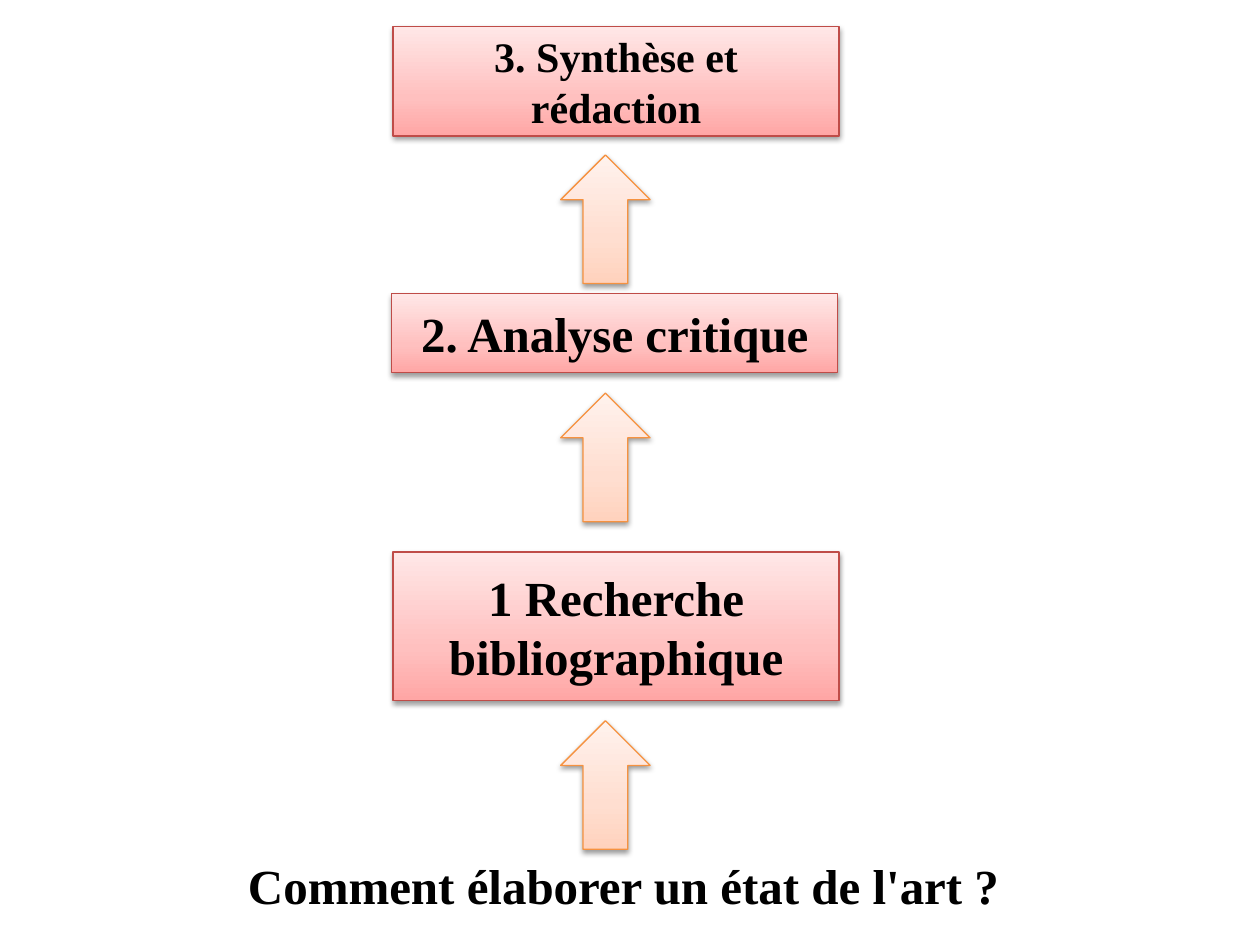
from lxml.etree import SubElement
from pptx import Presentation
from pptx.dml.color import RGBColor
from pptx.enum.shapes import MSO_SHAPE
from pptx.enum.text import MSO_ANCHOR, MSO_AUTO_SIZE, PP_ALIGN
from pptx.oxml import parse_xml
from pptx.oxml.ns import nsdecls
from pptx.util import Inches, Pt


def add_shaded_shape(kind, left, top, width, height, stops, outline):
    """Add a shape with a bottom-to-top gradient, thin outline and soft shadow."""
    shape = slide.shapes.add_shape(
        kind, Inches(left), Inches(top), Inches(width), Inches(height))
    stop_xml = "".join(
        f'<a:gs pos="{position * 1000}"><a:srgbClr val="{color}"/></a:gs>'
        for position, color in zip((0, 35, 100), stops))
    properties = shape._element.spPr
    properties.append(parse_xml(
        f'<a:gradFill {nsdecls("a")} rotWithShape="1"><a:gsLst>{stop_xml}</a:gsLst>'
        '<a:lin ang="16200000" scaled="1"/></a:gradFill>'))
    shape.line.color.rgb = RGBColor.from_string(outline)
    shape.line.width = Pt(0.75)
    shape.shadow.inherit = False
    properties[-1].append(parse_xml(
        f'<a:outerShdw {nsdecls("a")} blurRad="{Pt(3.1)}" dist="{Pt(1.6)}" '
        'dir="5400000" rotWithShape="0"><a:srgbClr val="000000">'
        '<a:alpha val="38000"/></a:srgbClr></a:outerShdw>'))
    return shape


def write_bold(paragraph, text, size):
    run = paragraph.add_run()
    run.text = text
    run.font.name = "Times New Roman"
    run.font.size = Pt(size)
    run.font.bold = True
    run.font.color.rgb = RGBColor.from_string("000000")


presentation = Presentation()
presentation.slide_width = Inches(10)
presentation.slide_height = Inches(7.5)
slide = presentation.slides.add_slide(presentation.slide_layouts[6])

# Steps, from the first at the bottom to the last at the top
steps = [
    ("1 Recherche bibliographique", 3.12, 4.38, 1.18, 28),
    ("2. Analyse critique", 3.11, 2.33, 0.63, 28),
    ("3. Synthèse et rédaction", 3.12, 0.21, 0.87, 24),
]
for label, left, top, height, size in steps:
    step = add_shaded_shape(MSO_SHAPE.RECTANGLE, left, top, 3.54, height,
                            ("FFA6A5", "FFC0BF", "FFE7E7"), "BF4C48")
    frame = step.text_frame
    frame.word_wrap = True
    frame.vertical_anchor = MSO_ANCHOR.MIDDLE
    frame.paragraphs[0].alignment = PP_ALIGN.CENTER
    write_bold(frame.paragraphs[0], label, size)

# Starting question
question = slide.shapes.add_textbox(
    Inches(1.87), Inches(6.74), Inches(6.23), Inches(0.57)).text_frame
question.word_wrap = False
question.auto_size = MSO_AUTO_SIZE.SHAPE_TO_FIT_TEXT
write_bold(question.paragraphs[0], "Comment élaborer un état de l'art ?", 28)

# Arrows leading up from the question through the steps
for top in (5.72, 3.12, 1.23):
    add_shaded_shape(MSO_SHAPE.UP_ARROW, 4.45, top, 0.71, 1.02,
                     ("FFD2BD", "FFDED0", "FFF2ED"), "F69240")

presentation.save("out.pptx")
